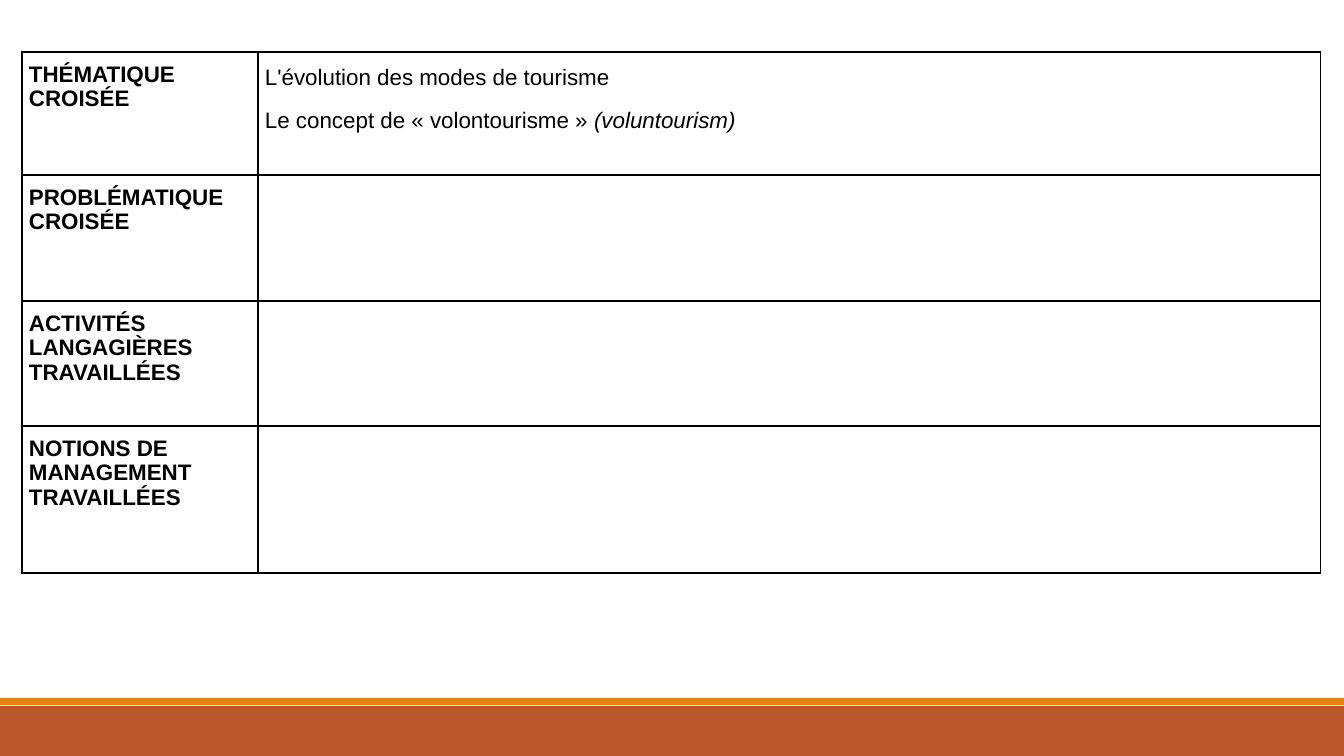
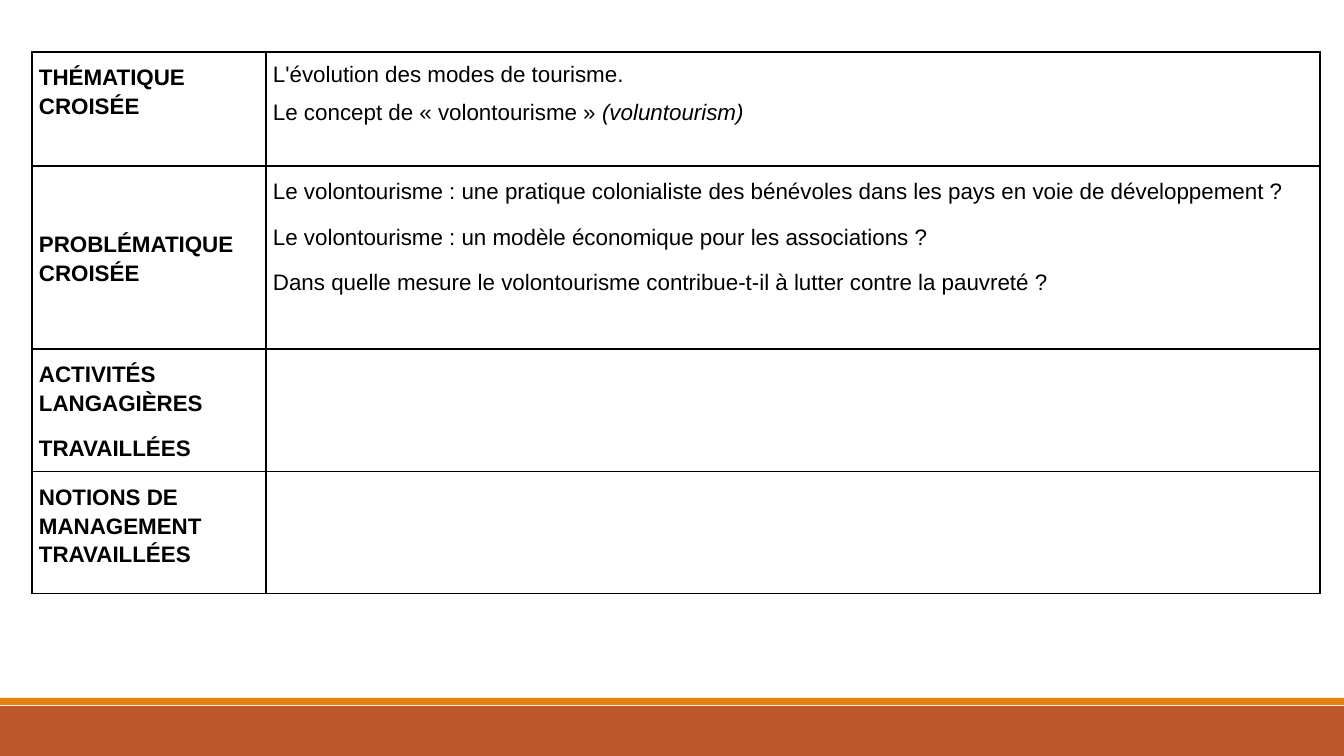
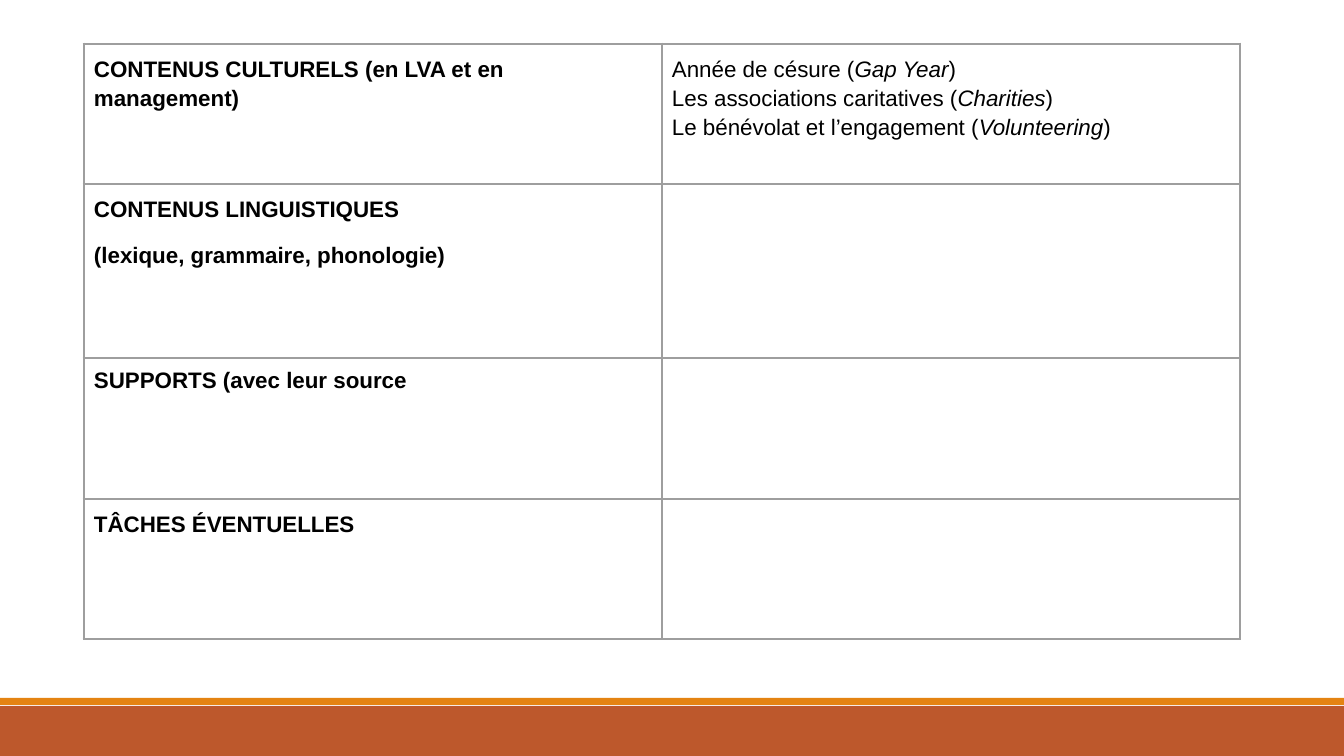
from dataclasses import dataclass
from lxml.etree import SubElement
from pptx import Presentation
from pptx.dml.color import RGBColor
from pptx.enum.shapes import MSO_SHAPE
from pptx.enum.text import MSO_ANCHOR
from pptx.oxml.ns import qn
from pptx.util import Emu, Pt

WIDTH, HEIGHT = 1344, 756
EMU_PER_PX = 12192000 / WIDTH


def px(length):
    return Emu(round(length * EMU_PER_PX))


@dataclass(frozen=True)
class Theme:
    font: str = "Arial"
    text_size: int = 16
    text: str = "000000"
    paper: str = "FFFFFF"
    band: str = "BD582C"
    band_edge: str = "E48312"
    dark_rule: str = "000000"
    grey_rule: str = "9E9E9E"


@dataclass(frozen=True)
class Row:
    height: int
    label: list
    answer: list = ()
    label_anchor: MSO_ANCHOR = MSO_ANCHOR.TOP


def lines(*texts, spacing=1.0, before=0):
    """Pair each text with the paragraph format they share; *stars* mark italics."""
    style = {"line_spacing": spacing, "space_before": Pt(before)}
    return [(text, style) for text in texts]


class Deck:
    def __init__(self, theme):
        self.theme = theme
        self.presentation = Presentation()
        self.presentation.slide_width = px(WIDTH)
        self.presentation.slide_height = px(HEIGHT)
        self.slide = None

    def new_slide(self):
        self.slide = self.presentation.slides.add_slide(self.presentation.slide_layouts[6])
        self.band(706, 50, self.theme.band)
        self.band(698, 7, self.theme.band_edge)

    def band(self, top, height, colour):
        band = self.slide.shapes.add_shape(MSO_SHAPE.RECTANGLE, 0, px(top), px(WIDTH), px(height))
        band.shadow.inherit = False
        band.fill.solid()
        band.fill.fore_color.rgb = RGBColor.from_string(colour)
        band.line.fill.background()

    def grid(self, left, top, columns, rows, rule_colour, rule_width=1, side_inset=7):
        total_height = sum(row.height for row in rows)
        table = self.slide.shapes.add_table(
            len(rows), len(columns), px(left), px(top), px(sum(columns)), px(total_height)).table
        table.first_row = table.horz_banding = False
        for column, width in zip(table.columns, columns):
            column.width = px(width)
        for table_row, row in zip(table.rows, rows):
            table_row.height = px(row.height)
            label, answer = table_row.cells
            for cell, content, bold in ((label, row.label, True), (answer, row.answer, False)):
                self.borders(cell, rule_colour, rule_width)
                self.cell(cell, content, bold, side_inset)
            label.vertical_anchor = row.label_anchor

    def borders(self, cell, colour, width):
        properties = cell._tc.get_or_add_tcPr()
        for side in ("a:lnL", "a:lnR", "a:lnT", "a:lnB"):
            rule = SubElement(properties, qn(side), w=str(Pt(width)))
            fill = SubElement(rule, qn("a:solidFill"))
            SubElement(fill, qn("a:srgbClr"), val=colour)

    def cell(self, cell, content, bold, side_inset):
        cell.fill.solid()
        cell.fill.fore_color.rgb = RGBColor.from_string(self.theme.paper)
        cell.margin_left = cell.margin_right = px(side_inset)
        cell.margin_top = cell.margin_bottom = px(10)
        frame = cell.text_frame
        for index, (text, style) in enumerate(content):
            paragraph = frame.add_paragraph() if index else frame.paragraphs[0]
            for name, value in style.items():
                setattr(paragraph, name, value)
            self.runs(paragraph, text, bold)

    def runs(self, paragraph, text, bold):
        for index, part in enumerate(text.split("*")):
            if not part:
                continue
            run = paragraph.add_run()
            run.text = part
            style = {"name": self.theme.font, "size": Pt(self.theme.text_size),
                     "bold": bold, "italic": index % 2 == 1}
            for name, value in style.items():
                setattr(run.font, name, value)
            run.font.color.rgb = RGBColor.from_string(self.theme.text)


CONCEPT = "Le concept de « volontourisme »* (voluntourism)*"


def blank_framework(deck):
    deck.new_slide()
    deck.grid(22, 52, (236, 1063), [
        Row(123, lines("THÉMATIQUE CROISÉE"),
            lines("L'évolution des modes de tourisme", CONCEPT, spacing=1.15, before=10)),
        Row(126, lines("PROBLÉMATIQUE CROISÉE")),
        Row(125, lines("ACTIVITÉS LANGAGIÈRES", "TRAVAILLÉES")),
        Row(147, lines("NOTIONS DE MANAGEMENT", "TRAVAILLÉES")),
    ], deck.theme.dark_rule)


def framework_with_questions(deck):
    spaced = {"spacing": 1.15, "before": 12}
    deck.new_slide()
    deck.grid(32, 52, (234, 1054), [
        Row(114, lines("THÉMATIQUE CROISÉE", **spaced),
            lines("L'évolution des modes de tourisme.", CONCEPT, before=10)),
        Row(183, lines("PROBLÉMATIQUE CROISÉE", spacing=1.15),
            lines("Le volontourisme : une pratique colonialiste des bénévoles "
                  "dans les pays en voie de développement ?",
                  "Le volontourisme : un modèle économique pour les associations ?",
                  "Dans quelle mesure le volontourisme contribue-t-il "
                  "à lutter contre la pauvreté ?", **spaced),
            MSO_ANCHOR.MIDDLE),
        Row(122, lines("ACTIVITÉS LANGAGIÈRES", "TRAVAILLÉES", **spaced)),
        Row(122, lines("NOTIONS DE", "MANAGEMENT", "TRAVAILLÉES", spacing=1.15)),
    ], deck.theme.dark_rule)


def contents_and_tasks(deck):
    spaced = {"spacing": 1.15, "before": 12}
    deck.new_slide()
    deck.grid(84, 44, (578, 578), [
        Row(140, lines("CONTENUS CULTURELS (en LVA et en management)", **spaced),
            lines("Année de césure (*Gap Year*)",
                  "Les associations caritatives (*Charities*)",
                  "Le bénévolat et l’engagement (*Volunteering*)", spacing=1.15)),
        Row(174, lines("CONTENUS LINGUISTIQUES", "(lexique, grammaire, phonologie)", **spaced)),
        Row(141, lines("SUPPORTS (avec leur source")),
        Row(140, lines("TÂCHES ÉVENTUELLES", **spaced)),
    ], deck.theme.grey_rule, rule_width=2.25, side_inset=10)


def main():
    deck = Deck(Theme())
    blank_framework(deck)
    framework_with_questions(deck)
    contents_and_tasks(deck)
    deck.presentation.save("out.pptx")


if __name__ == "__main__":
    main()
